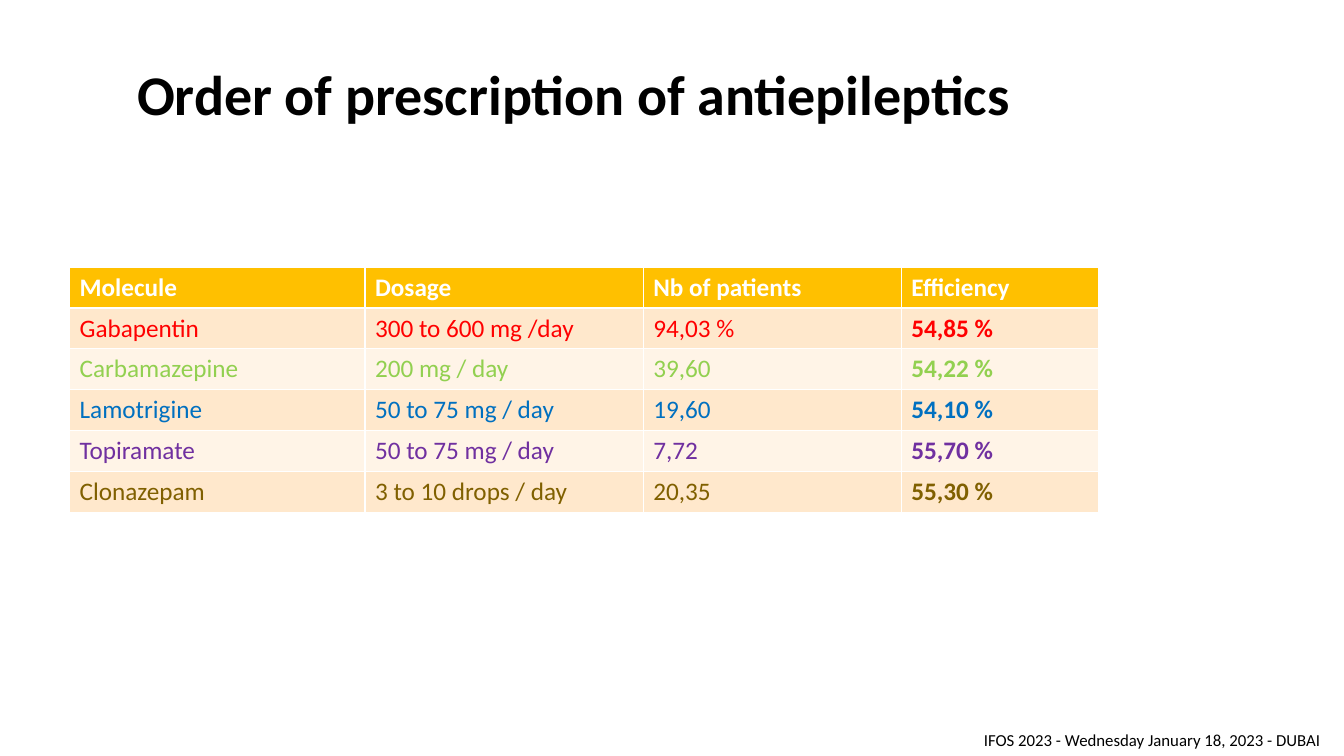
from pptx import Presentation
from pptx.dml.color import RGBColor
from pptx.enum.text import MSO_ANCHOR, PP_ALIGN
from pptx.util import Inches, Pt

LEFT = PP_ALIGN.LEFT
MIDDLE = MSO_ANCHOR.MIDDLE
TOP = MSO_ANCHOR.TOP

HUES = {
    "black": "000000", "white": "FFFFFF", "gold": "FFC000",
    "peach": "FFE8CC", "cream": "FFF4E7", "red": "FF0000",
    "green": "92D050", "blue": "0070C0", "plum": "7030A0",
    "brown": "806000",
}


def write(frame, text, size, hue, bold=False):
    para = frame.paragraphs[0]
    para.alignment = LEFT
    run = para.add_run()
    run.text = text
    font = run.font
    font.name = "Calibri"
    font.size = Pt(size)
    font.bold = bold
    font.color.rgb = RGBColor.from_string(HUES[hue])


deck = Presentation()
deck.slide_width = Inches(13.33)
deck.slide_height = Inches(7.5)
slide = deck.slides.add_slide(deck.slide_layouts[5])

# Title
title = slide.shapes.title
title.left, title.top = Inches(1.26), Inches(0.55)
title.width, title.height = Inches(11.5), Inches(0.83)
title.text_frame.vertical_anchor = MIDDLE
write(title.text_frame, "Order of prescription of antiepileptics", 40, "black", True)
title.text_frame.paragraphs[0].line_spacing = 0.9

# Drug table: text colour, then the cells of each row
ROWS = [
    ("white", "Molecule", "Dosage", "Nb of patients", "Efficiency"),
    ("red", "Gabapentin", "300 to 600 mg /day", "94,03 %", "54,85 %"),
    ("green", "Carbamazepine", "200 mg / day", "39,60", "54,22 %"),
    ("blue", "Lamotrigine", "50 to 75 mg / day", "19,60", "54,10 %"),
    ("plum", "Topiramate", "50 to 75 mg / day", "7,72", "55,70 %"),
    ("brown", "Clonazepam", "3 to 10 drops / day", "20,35", "55,30 %"),
]
WIDTHS = [2.93, 2.76, 2.56, 1.96]
ROW_H = 0.4

table = slide.shapes.add_table(
    len(ROWS), len(WIDTHS), Inches(0.69), Inches(2.65),
    Inches(sum(WIDTHS)), Inches(ROW_H * len(ROWS))).table
for col, width in zip(table.columns, WIDTHS):
    col.width = Inches(width)

for r, (hue, *texts) in enumerate(ROWS):
    table.rows[r].height = Inches(ROW_H)
    band = "gold" if r == 0 else ("cream", "peach")[r % 2]
    for c, text in enumerate(texts):
        cell = table.cell(r, c)
        cell.fill.solid()
        cell.fill.fore_color.rgb = RGBColor.from_string(HUES[band])
        cell.vertical_anchor = MIDDLE
        last = c == len(WIDTHS) - 1
        write(cell.text_frame, text, 18, hue, r == 0 or last)

# Event line in the bottom right corner
event = slide.shapes.add_textbox(
    Inches(9.66), Inches(7.19), Inches(3.7), Inches(0.36)).text_frame
event.word_wrap = True
event.vertical_anchor = TOP
write(event, "IFOS 2023 - Wednesday January 18, 2023 - DUBAI", 12, "black")

deck.save("out.pptx")
